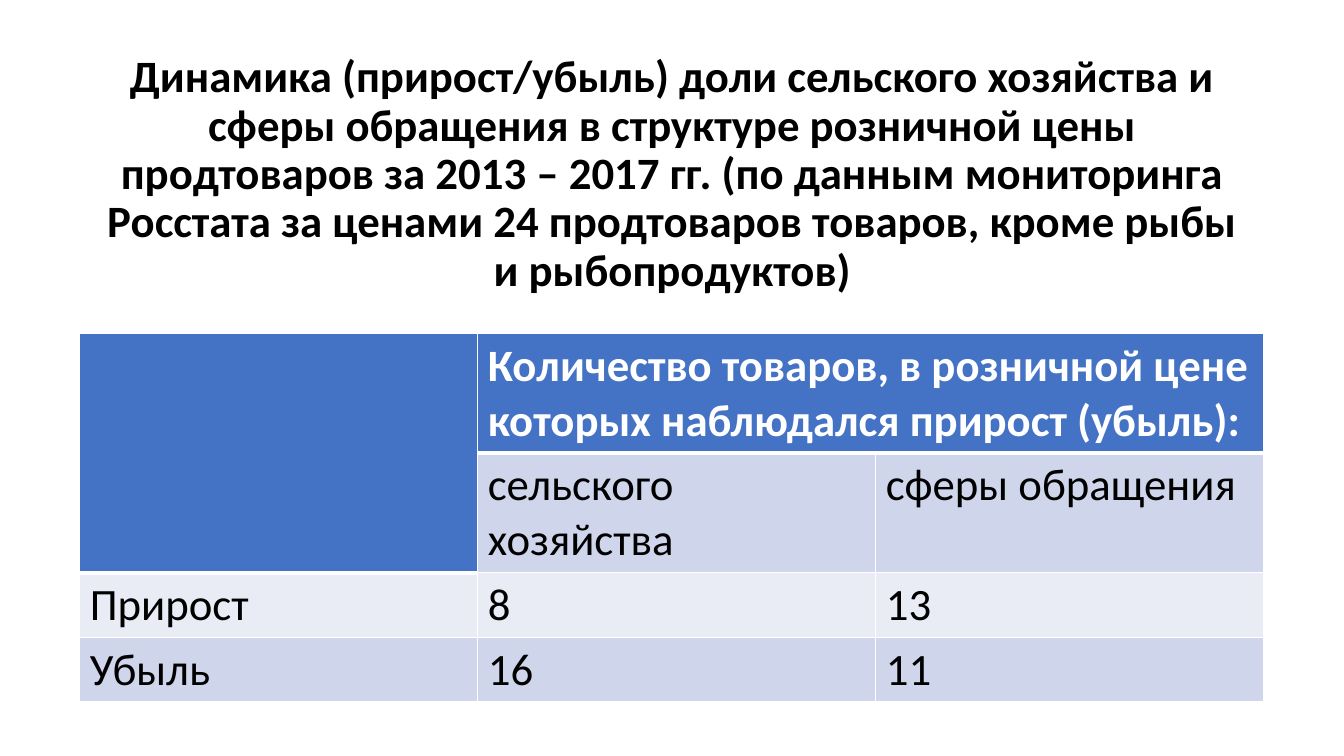
import pptx
import pptx.dml.color
import pptx.enum.text
import pptx.oxml
import pptx.oxml.ns
import pptx.util
from pptx.util import Cm

HEADER, BAND_DARK, BAND_LIGHT = "4472C4", "CFD5EA", "E9EBF5"
WHITE, BLACK = "FFFFFF", "000000"

TITLE = (
    "Динамика (прирост/убыль) доли сельского хозяйства и сферы обращения "
    "в структуре розничной цены продтоваров за 2013 – 2017 гг. (по данным "
    "мониторинга Росстата за ценами 24 продтоваров товаров, кроме рыбы "
    "и рыбопродуктов)"
)
GOODS = [
    ["", "Количество товаров, в розничной цене которых наблюдался прирост (убыль):", ""],
    ["", "сельского хозяйства", "сферы обращения"],
    ["Прирост", "8", "13"],
    ["Убыль", "16", "11"],
]
ROW_FILLS = [HEADER, BAND_DARK, BAND_LIGHT, BAND_DARK]
COLUMN_WIDTHS = [10.03, 10.03, 9.78]
ROW_HEIGHTS = [3.01, 3.01, 1.63, 1.63]


def rgb(value):
    return pptx.dml.color.RGBColor.from_string(value)


def write(frame, text, color=BLACK, bold=False, size=32, font="Calibri",
          align=pptx.enum.text.PP_ALIGN.LEFT, spacing=None):
    paragraph = frame.paragraphs[0]
    paragraph.alignment = align
    paragraph.line_spacing = spacing
    style = paragraph.font
    if text:
        run = paragraph.add_run()
        run.text = text
        style = run.font
    style.name, style.size, style.bold = font, pptx.util.Pt(size), bold
    style.color.rgb = rgb(color)


def border(cell, bottom):
    """Draw white cell edges, with the bottom one as wide as given in points."""
    properties = cell._tc.get_or_add_tcPr()
    for place, (side, width) in enumerate(zip("LRTB", (1, 1, 1, bottom))):
        properties.insert(place, pptx.oxml.parse_xml(
            f'<a:ln{side} {pptx.oxml.ns.nsdecls("a")} w="{pptx.util.Pt(width)}">'
            f'<a:solidFill><a:srgbClr val="{WHITE}"/></a:solidFill></a:ln{side}>'))


class Deck:
    def __init__(self):
        self.show = pptx.Presentation()
        self.show.slide_width, self.show.slide_height = Cm(33.87), Cm(19.05)
        self.slide = self.show.slides.add_slide(self.show.slide_layouts[6])

    def title(self, text, left, top, width, height):
        frame = self.slide.shapes.add_textbox(
            Cm(left), Cm(top), Cm(width), Cm(height)).text_frame
        frame.word_wrap = True
        frame.vertical_anchor = pptx.enum.text.MSO_ANCHOR.MIDDLE
        write(frame, text, bold=True, spacing=0.9,
              align=pptx.enum.text.PP_ALIGN.CENTER)

    def table(self, rows, left, top, widths, heights, fills):
        grid = self.slide.shapes.add_table(
            len(rows), len(widths), Cm(left), Cm(top),
            Cm(sum(widths)), Cm(sum(heights))).table
        for column, width in zip(grid.columns, widths):
            column.width = Cm(width)
        for row, height in zip(grid.rows, heights):
            row.height = Cm(height)
        grid.cell(0, 0).merge(grid.cell(1, 0))
        grid.cell(0, 1).merge(grid.cell(0, 2))
        for r, texts in enumerate(rows):
            for c, text in enumerate(texts):
                cell = grid.cell(r, c)
                heading = r == 0 or (r == 1 and c == 0)
                cell.fill.solid()
                cell.fill.fore_color.rgb = rgb(HEADER if heading else fills[r])
                border(cell, bottom=3 if heading else 1)
                write(cell.text_frame, text, bold=heading,
                      color=WHITE if heading else BLACK)


def main():
    deck = Deck()
    deck.title(TITLE, 2.34, 2.57, 29.21, 3.68)
    deck.table(GOODS, 2.01, 8.41, COLUMN_WIDTHS, ROW_HEIGHTS, ROW_FILLS)
    deck.show.save("out.pptx")


if __name__ == "__main__":
    main()
